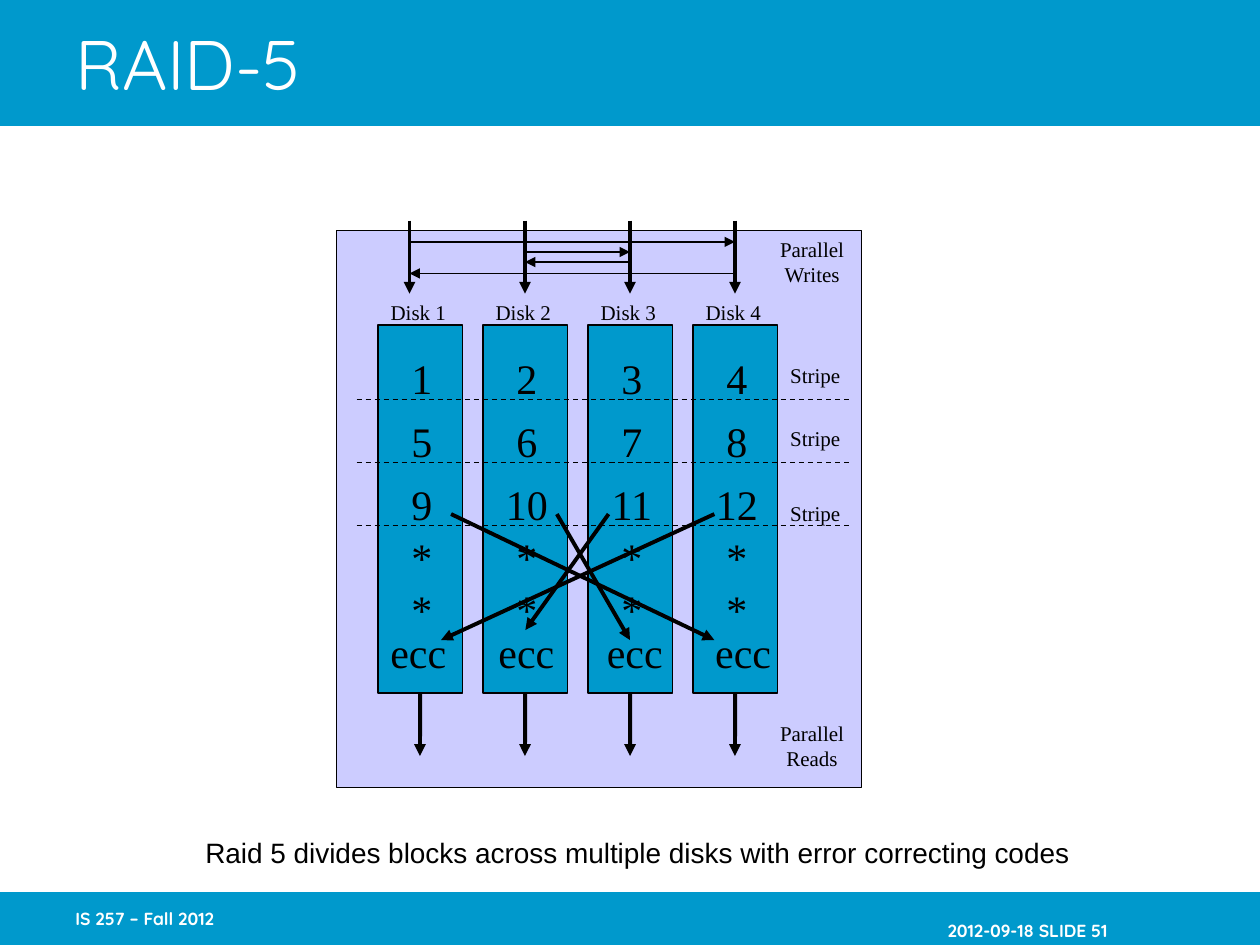
from lxml import etree
from pptx import Presentation
from pptx.dml.color import RGBColor
from pptx.enum.dml import MSO_LINE
from pptx.enum.shapes import MSO_CONNECTOR, MSO_SHAPE
from pptx.enum.text import MSO_ANCHOR, PP_ALIGN
from pptx.oxml.ns import qn
from pptx.util import Inches, Pt

STRAIGHT = MSO_CONNECTOR.STRAIGHT
RECT = MSO_SHAPE.RECTANGLE
DASH = MSO_LINE.DASH
TOP, MIDDLE, BOTTOM = MSO_ANCHOR.TOP, MSO_ANCHOR.MIDDLE, MSO_ANCHOR.BOTTOM
LEFT, CENTER, RIGHT = PP_ALIGN.LEFT, PP_ALIGN.CENTER, PP_ALIGN.RIGHT
BLUE, LAVENDER, BLACK, WHITE = "0099CC", "CCCCFF", "000000", "FFFFFF"
SERIF, SANS, HEADING = "Times New Roman", "Arial", "Quicksand"


def rgb(color):
    """Turn a hex string into a colour."""
    return RGBColor.from_string(color)


class Deck:
    """Hold the style and the current slide."""

    def __init__(self, prs):
        """Add a blank slide to the presentation."""
        self.s = prs.slides.add_slide(prs.slide_layouts[6])

    def rect(self, x, y, w, h, fill, line=None):
        """Draw a filled rectangle, outlined if a line colour is given."""
        sp = self.s.shapes.add_shape(RECT, Inches(x), Inches(y), Inches(w), Inches(h))
        sp.shadow.inherit = False
        sp.fill.solid()
        sp.fill.fore_color.rgb = rgb(fill)
        if line:
            sp.line.color.rgb = rgb(line)
            sp.line.width = Pt(0.75)
        else:
            sp.line.fill.background()
        return sp

    def text(self, x, y, w, h, text, size=12, font=SERIF, color=BLACK, bold=False,
             align=CENTER, anchor=TOP, wrap=False, tabs=()):
        """Write a text box, with centred tab stops if any are given."""
        sp = self.s.shapes.add_textbox(Inches(x), Inches(y), Inches(w), Inches(h))
        tf = sp.text_frame
        tf.word_wrap = wrap
        tf.vertical_anchor = anchor
        tf.text = text
        for p in tf.paragraphs:
            p.alignment = align
            if tabs:
                tab_list = etree.SubElement(p._p.get_or_add_pPr(), qn("a:tabLst"))
                for pos in tabs:
                    etree.SubElement(tab_list, qn("a:tab"), pos=str(Inches(pos)), algn="ctr")
            for r in p.runs:
                r.font.size = Pt(size)
                r.font.name = font
                r.font.bold = bold
                r.font.color.rgb = rgb(color)
        return tf

    def line(self, x1, y1, x2, y2, width=0.75, arrow=True, dash=None):
        """Draw a straight line, with an arrowhead at its end by default."""
        c = self.s.shapes.add_connector(STRAIGHT, Inches(x1), Inches(y1), Inches(x2), Inches(y2))
        c.line.color.rgb = rgb(BLACK)
        c.line.width = Pt(width)
        if dash:
            c.line.dash_style = dash
        if arrow:
            etree.SubElement(c.line._get_or_add_ln(), qn("a:tailEnd"), type="triangle")
        etree.SubElement(c._element.spPr, qn("a:effectLst"))
        return c


def main():
    """Build the RAID-5 slide."""
    prs = Presentation()
    prs.slide_width, prs.slide_height = Inches(10), Inches(7.5)
    deck = Deck(prs)

    deck.rect(0, 0, 10, 1, BLUE)
    deck.rect(0, 7.08, 10, 0.42, BLUE)
    deck.text(0.5, 0, 8.5, 1, "RAID-5", 40, HEADING, WHITE, align=LEFT, anchor=MIDDLE, wrap=True)
    deck.text(0.5, 7.08, 2.08, 0.42, "IS 257 – Fall 2012", 10, HEADING, WHITE, True,
              LEFT, MIDDLE, True)
    tf = deck.text(6.71, 7.08, 2.08, 0.42, "2012-09-18 SLIDE 51", 10, HEADING, WHITE, True,
                   RIGHT, BOTTOM, True)
    tf.margin_right, tf.margin_bottom = 0, Inches(0.03)

    deck.rect(2.67, 1.83, 4.17, 4.42, LAVENDER, BLACK)
    pitch = 2.5 / 3
    disk_xs = [3 + pitch * i for i in range(4)]
    centers = [x + 1 / 3 for x in disk_xs]
    write_xs = [3.25] + centers[1:]
    disks = [deck.rect(x, 2.58, 0.67, 2.92, BLUE, BLACK) for x in disk_xs]
    for i, x in enumerate(disk_xs):
        deck.line(write_xs[i], 1.75, write_xs[i], 2.33, 2.25)
        deck.text(x, 2.33, 0.64, 0.3, f"Disk {i + 1}")

    rows = [(2.75, "1 2 3 4"), (3.25, "5 6 7 8"), (3.75, "9 10 11 12"),
            (4.17, "* * * *"), (4.58, "* * * *"), (4.92, "ecc ecc ecc ecc")]
    for y, row in rows:
        first, step = (0.22, 0.86) if row.startswith("ecc") else (0.25, pitch)
        deck.text(3, y, 3.3, 0.5, "\t" + row.replace(" ", "\t"), 24, align=LEFT, wrap=True,
                  tabs=[first + step * i for i in range(4)])

    for disk, x in zip(disks, centers):
        deck.line(x, 5.5, x, 6, 2.25).begin_connect(disk, 2)
    for y, word in ((1.83, "Writes"), (5.67, "Reads")):
        deck.text(6.09, y, 0.71, 0.5, f"Parallel\n{word}")
    for label_y, line_y in ((2.83, 3.17), (3.33, 3.67), (3.92, 4.17)):
        deck.text(6.17, label_y, 0.6, 0.3, "Stripe")
        deck.line(2.83, line_y, 6.75, line_y, arrow=False, dash=DASH)

    for x1, x2, y2 in ((3.58, 5.67, 5.08), (5.67, 3.5, 5.08), (4.42, 5, 5.08), (4.83, 4.17, 5)):
        deck.line(x1, 4.08, x2, y2, 2.25)
    for start, end, y in ((0, 3, 1.92), (3, 0, 2.17), (1, 2, 2), (2, 1, 2.08)):
        deck.line(write_xs[start], y, write_xs[end], y)

    deck.text(1.52, 6.58, 7.08, 0.37,
              "Raid 5 divides blocks across multiple disks with error correcting codes", 16, SANS)
    prs.save("out.pptx")


if __name__ == "__main__":
    main()
